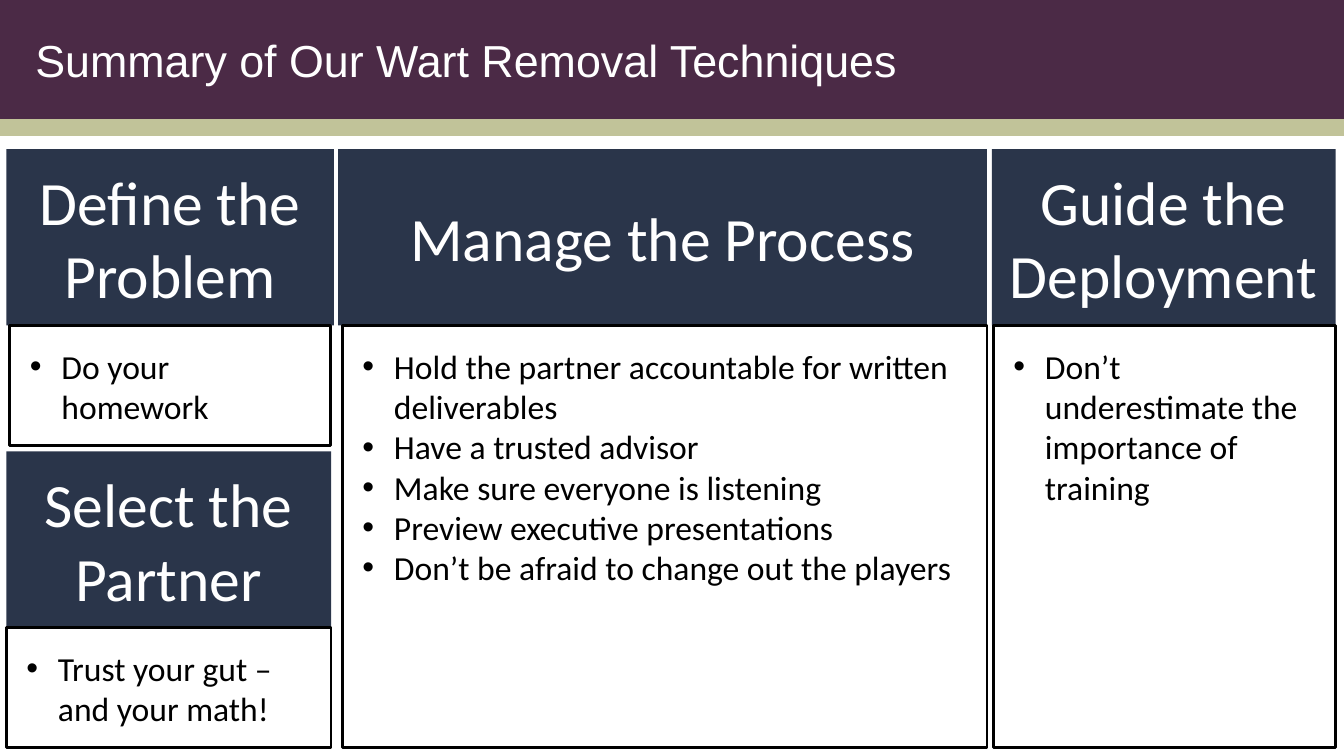
from lxml.etree import SubElement
from pptx import Presentation
from pptx.dml.color import RGBColor
from pptx.enum.shapes import MSO_SHAPE
from pptx.enum.text import MSO_ANCHOR, MSO_AUTO_SIZE, PP_ALIGN
from pptx.oxml.ns import qn
from pptx.util import Pt

WHITE = RGBColor(0xFF, 0xFF, 0xFF)
BLACK = RGBColor(0x00, 0x00, 0x00)
PLUM = RGBColor(0x4B, 0x2A, 0x46)
SAGE = RGBColor(0xC1, 0xC3, 0x99)
NAVY = RGBColor(0x2A, 0x35, 0x4A)

WIDTH, HEIGHT = 960, 540
HEADING_HEIGHT = 126
TOP, LOWER_TOP, BOTTOM = 106.5, 322.5, 534
UPPER_BOTTOM = 318.5

PANELS = [
    ("Select the Partner", (4.5, LOWER_TOP, 232, BOTTOM), (4.5, 232),
     ["Trust your gut – and your math!"]),
    ("Define the Problem", (4.5, TOP, 234, UPPER_BOTTOM), (7, 229),
     ["Do your homework"]),
    ("Manage the Process", (241.5, TOP, 463.5, BOTTOM), (244.5, 460.5),
     ["Hold the partner accountable for written deliverables",
      "Have a trusted advisor",
      "Make sure everyone is listening",
      "Preview executive presentations",
      "Don’t be afraid to change out the players"]),
    ("Guide the Deployment", (708.5, TOP, 245.5, BOTTOM), (709.5, 244.5),
     ["Don’t underestimate the importance of training"]),
]


def add_block(shapes, left, top, width, height, color):
    """Add a plain filled rectangle without line or shadow."""
    block = shapes.add_shape(MSO_SHAPE.RECTANGLE, Pt(left), Pt(top), Pt(width), Pt(height))
    block.shadow.inherit = False
    block.fill.solid()
    block.fill.fore_color.rgb = color
    block.line.fill.background()
    return block


def set_font(paragraph, name, size, color):
    """Format a whole paragraph."""
    paragraph.font.name = name
    paragraph.font.size = Pt(size)
    paragraph.font.color.rgb = color


def add_bullet(paragraph):
    """Give a paragraph a hanging round bullet."""
    properties = paragraph._p.get_or_add_pPr()
    properties.set("marL", str(Pt(22.5)))
    properties.set("indent", str(-Pt(22.5)))
    SubElement(properties, qn("a:buFont")).set("typeface", "Arial")
    SubElement(properties, qn("a:buChar")).set("char", "•")


def add_header(page, text, width):
    """Place the title over the two bands at the top of the page."""
    title = page.shapes.title
    for top, height, color in ((0, 90, PLUM), (85, 12, SAGE)):
        band = add_block(page.shapes, 0, top, width, height, color)
        title.element.addprevious(band.element)
    title.left, title.top, title.width, title.height = Pt(18), Pt(0), Pt(width - 31), Pt(84.5)
    frame = title.text_frame
    frame.text = text
    frame.auto_size = MSO_AUTO_SIZE.NONE
    frame.vertical_anchor = MSO_ANCHOR.MIDDLE
    frame.paragraphs[0].alignment = PP_ALIGN.LEFT
    set_font(frame.paragraphs[0], "Arial", 32, WHITE)


def add_panel(page, heading, bounds, list_span, items):
    """Group a dark heading with the outlined bullet list below it."""
    left, top, width, bottom = bounds
    list_left, list_width = list_span
    list_top = top + HEADING_HEIGHT
    shapes = page.shapes.add_group_shape().shapes

    header = add_block(shapes, left, top, width, HEADING_HEIGHT, NAVY).text_frame
    header.word_wrap = True
    header.vertical_anchor = MSO_ANCHOR.MIDDLE
    header.text = heading
    header.paragraphs[0].alignment = PP_ALIGN.CENTER
    set_font(header.paragraphs[0], "Calibri", 44, WHITE)

    box = add_block(shapes, list_left, list_top, list_width, bottom - list_top, WHITE)
    box.line.color.rgb = BLACK
    box.line.width = Pt(2)
    frame = box.text_frame
    frame.word_wrap = True
    frame.vertical_anchor = MSO_ANCHOR.TOP
    frame.margin_left = frame.margin_right = Pt(14.4)
    frame.margin_top = frame.margin_bottom = Pt(14.4)
    frame.text = "\n".join(items)
    for para in frame.paragraphs:
        add_bullet(para)
        para.alignment = PP_ALIGN.LEFT
        set_font(para, "Calibri", 24, BLACK)


def main():
    """Build and save the summary slide."""
    deck = Presentation()
    deck.slide_width, deck.slide_height = Pt(WIDTH), Pt(HEIGHT)
    page = deck.slides.add_slide(deck.slide_layouts[5])
    add_header(page, "Summary of Our Wart Removal Techniques", WIDTH)
    for panel in PANELS:
        add_panel(page, *panel)
    deck.save("out.pptx")


if __name__ == "__main__":
    main()
